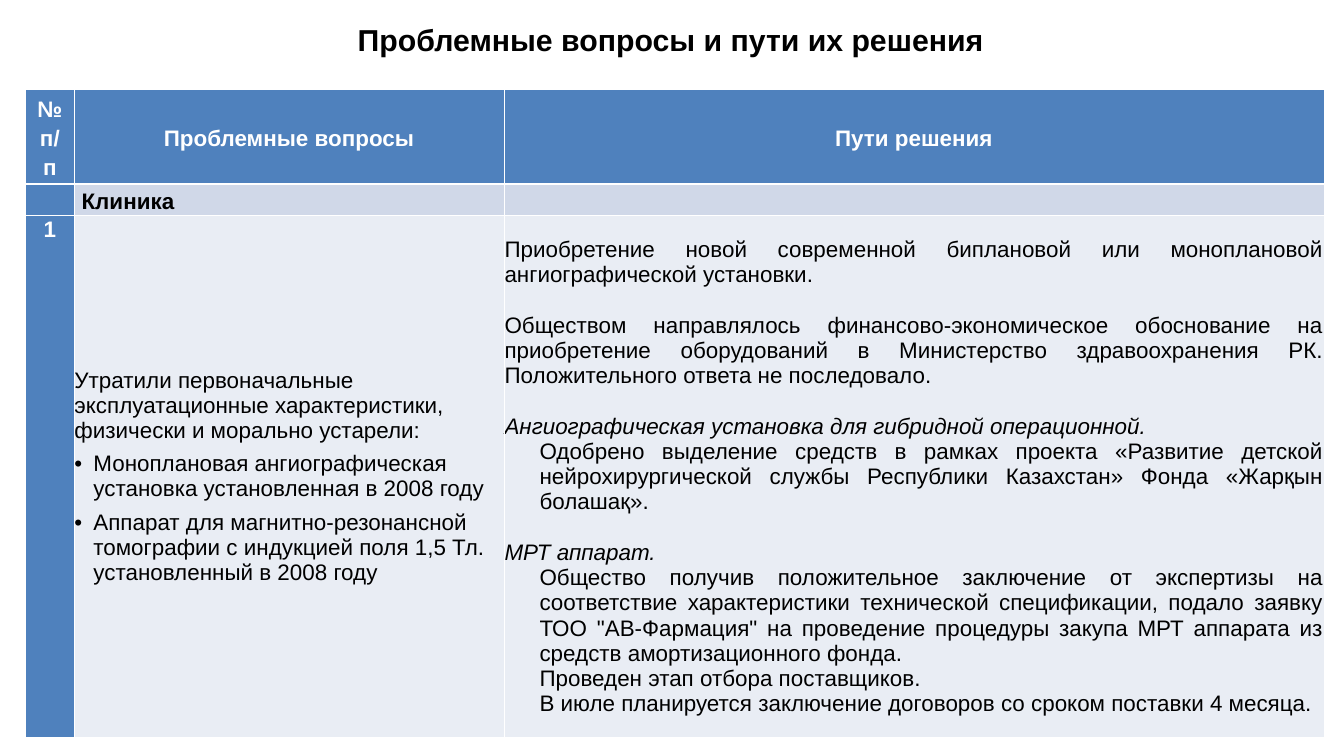
from pptx import Presentation
from pptx.util import Pt
from pptx.dml.color import RGBColor
from pptx.enum.text import PP_ALIGN, MSO_ANCHOR
from lxml.etree import SubElement, fromstring

NS = "http://schemas.openxmlformats.org/drawingml/2006/main"
INK = {"blue": "4F81BD", "band": "D0D8E8", "pale": "E9EDF4", "white": "FFFFFF", "black": "000000"}
LEFT, MID, JUST = PP_ALIGN.LEFT, PP_ALIGN.CENTER, PP_ALIGN.JUSTIFY


def write(frame, text, size=32, color="black", bold=False, italic=False, align=LEFT,
          line=1.0, before=0, after=0, indent=0, bullet=False):
    para = frame.paragraphs[0]
    if para.runs:
        para = frame.add_paragraph()
    para.alignment, para.line_spacing = align, line
    para.space_before, para.space_after = Pt(before), Pt(after)
    props = para._p.get_or_add_pPr()
    props.set("marL", str(Pt(indent)))
    props.set("indent", str(Pt(-indent if bullet else 0)))
    if bullet:
        SubElement(props, f"{{{NS}}}buFont", typeface="Arial")
        SubElement(props, f"{{{NS}}}buChar", char="•")
    run = para.add_run()
    run.text = text
    font = run.font
    font.name, font.size, font.bold, font.italic = "Arial", Pt(size), bold, italic
    font.color.rgb = RGBColor.from_string(INK[color])


def paint(cell, color, edges):
    cell.fill.solid()
    cell.fill.fore_color.rgb = RGBColor.from_string(INK[color])
    props = cell._tc.get_or_add_tcPr()
    for spot, (side, width) in enumerate(edges.items()):
        props.insert(spot, fromstring(
            f'<a:ln{side} xmlns:a="{NS}" w="{Pt(width)}"><a:solidFill>'
            f'<a:srgbClr val="{INK["white"]}"/></a:solidFill></a:ln{side}>'))


deck = Presentation()
deck.slide_width, deck.slide_height = Pt(1919.5), Pt(1080)
slide = deck.slides.add_slide(deck.slide_layouts[6])

title = slide.shapes.add_textbox(Pt(130.3), Pt(28), Pt(1655.3), Pt(57)).text_frame
title.word_wrap = True
title.vertical_anchor = MSO_ANCHOR.MIDDLE
title.margin_top = title.margin_bottom = 0
write(title, "Проблемные вопросы и пути их решения", size=43.2, bold=True, align=MID)

widths = [69, 614.2, 1170.8]
heights = [135.4, 45.4, 745.2]
table = slide.shapes.add_table(3, 3, Pt(36.7), Pt(127.4), Pt(sum(widths)), Pt(sum(heights))).table
for col, width in zip(table.columns, widths):
    col.width = Pt(width)
for row, height in zip(table.rows, heights):
    row.height = Pt(height)

pads = [[(10.8, 0)] * 3, [(7.2, 3.6), (10.8, 0), (7.2, 3.6)], [(5, 0), (0.7, 0.4), (0.7, 0.4)]]
for r, tint in enumerate(["blue", "band", "pale"]):
    edges = {"L": 1, "R": 1, "T": 3 if r == 1 else 1, "B": 3 if r == 0 else 1}
    for c in range(3):
        cell = table.cell(r, c)
        paint(cell, tint if c else "blue", edges)
        side, top = pads[r][c]
        cell.margin_left = cell.margin_right = Pt(side)
        cell.margin_top, cell.margin_bottom = Pt(top), 0
        cell.vertical_anchor = MSO_ANCHOR.TOP if (r, c) == (2, 0) else MSO_ANCHOR.MIDDLE

for c, text in enumerate(["№ п/п", "Проблемные вопросы", "Пути решения"]):
    write(table.cell(0, c).text_frame, text, color="white", bold=True, align=MID, line=1.15, after=10)
write(table.cell(1, 1).text_frame, "Клиника", bold=True, line=1.15, after=10)
write(table.cell(2, 0).text_frame, "1", color="white", bold=True, align=MID, line=1.06)

issue = table.cell(2, 1).text_frame
write(issue, "Утратили первоначальные эксплуатационные характеристики, физически и морально устарели:", after=12)
write(issue, "Моноплановая ангиографическая установка установленная в 2008 году",
      after=12, indent=27, bullet=True)
write(issue, "Аппарат для магнитно-резонансной томографии с индукцией поля 1,5 Тл. установленный в 2008 году",
      indent=27, bullet=True)

GAP = {"before": 36.8}
HEAD = {"italic": True}
BODY = {"indent": 50}
steps = [
    ("Приобретение новой современной биплановой или моноплановой ангиографической установки.", {}),
    ("Обществом направлялось финансово-экономическое обоснование на приобретение оборудований "
     "в Министерство здравоохранения РК. Положительного ответа не последовало.", GAP),
    ("Ангиографическая установка для гибридной операционной.", HEAD | GAP),
    ("Одобрено выделение средств в рамках проекта «Развитие детской нейрохирургической службы "
     "Республики Казахстан» Фонда «Жарқын болашақ».", BODY),
    ("МРТ аппарат.", HEAD | GAP),
    ("Общество получив положительное заключение от экспертизы на соответствие характеристики "
     "технической спецификации, подало заявку ТОО \"АВ-Фармация\" на проведение процедуры закупа "
     "МРТ аппарата из средств амортизационного фонда.", BODY),
    ("Проведен этап отбора поставщиков.", BODY),
    ("В июле планируется заключение договоров со сроком поставки 4 месяца.", BODY),
]
for text, look in steps:
    write(table.cell(2, 2).text_frame, text, align=JUST, **look)

deck.save("out.pptx")
